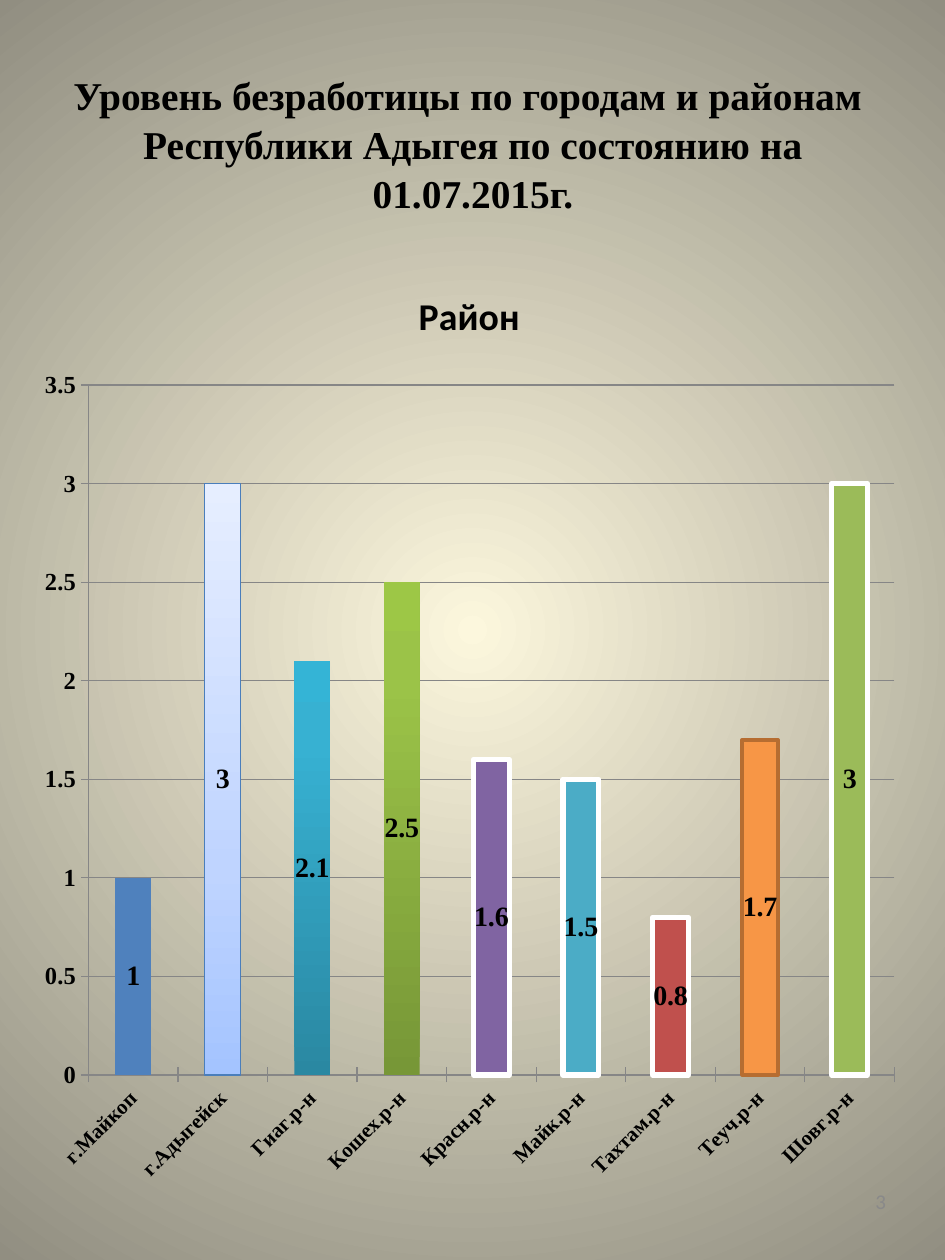
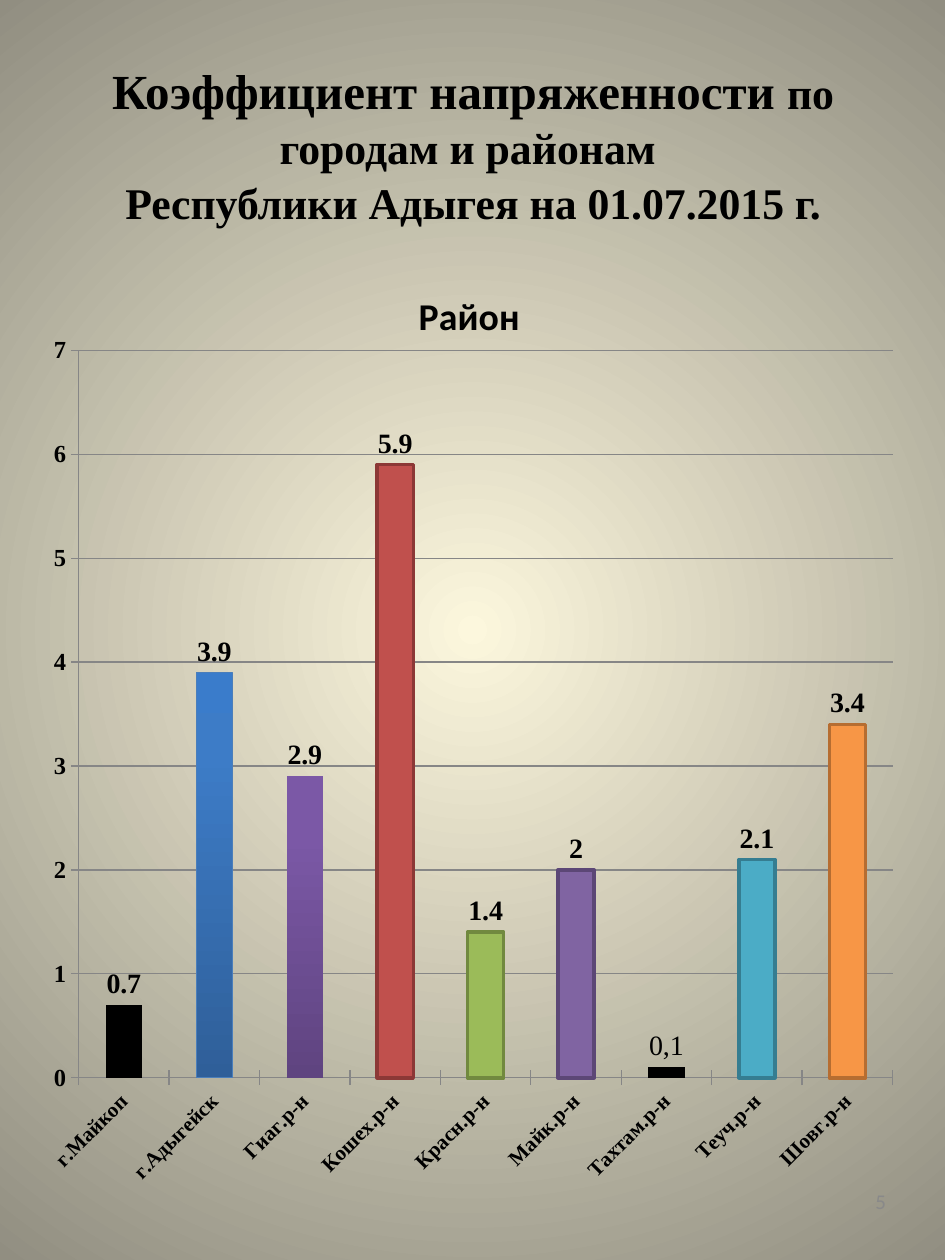
"""Two slides of column charts on unemployment in the districts of Adygea."""
from lxml.etree import SubElement
from pptx import Presentation
from pptx.chart.data import CategoryChartData
from pptx.dml.color import RGBColor
from pptx.enum.chart import XL_CHART_TYPE as CT, XL_LABEL_POSITION as LP, XL_TICK_MARK as TM
from pptx.enum.text import MSO_ANCHOR, MSO_AUTO_SIZE, PP_ALIGN
from pptx.oxml import parse_xml
from pptx.oxml.ns import nsdecls, qn
from pptx.util import Inches, Pt

COLORS = {
    "text": "000000", "muted": "898989", "grid": "868686", "white": "FFFFFF",
    "glow": "FCF7DD", "edge": "918E81",
    "blue": "4F81BD", "red": "C0504D", "green": "9BBB59",
    "purple": "8064A2", "teal": "4BACC6", "orange": "F79646",
    "blue_line": "4A7EBB", "red_line": "8C3836", "green_line": "71893F",
    "purple_line": "5C4776", "teal_line": "357D91", "orange_line": "B66D31",
}
SERIF, SANS = "Times New Roman", "Calibri"
UPWARD = '<a:lin ang="16200000" scaled="0"/>'
RADIAL = ('<a:path path="circle"><a:fillToRect l="50000" t="50000" '
          'r="50000" b="50000"/></a:path>')
DISTRICTS = ["г.Майкоп", "г.Адыгейск", "Гиаг.р-н", "Кошех.р-н", "Красн.р-н",
             "Майк.р-н", "Тахтам.р-н", "Теуч.р-н", "Шовг.р-н"]


def rgb(name):
    """Return the named colour."""
    return RGBColor.from_string(COLORS[name])


def gradient(stops, shade):
    """Return a gradient fill element from (percent, hex) stops."""
    gs = "".join(f'<a:gs pos="{pos * 1000}"><a:srgbClr val="{c}"/></a:gs>' for pos, c in stops)
    return parse_xml(f'<a:gradFill {nsdecls("a")} rotWithShape="1">'
                     f'<a:gsLst>{gs}</a:gsLst>{shade}</a:gradFill>')


def style_font(font, size, name=SERIF, bold=True, color="text"):
    """Format a font."""
    font.size, font.name, font.bold = Pt(size), name, bold
    font.color.rgb = rgb(color)


def add_text(p, text, **fmt):
    """Add formatted text to a paragraph, with a line break at each newline."""
    for i, line in enumerate(text.split("\n")):
        if i:
            p.add_line_break()
        r = p.add_run()
        r.text = line
        style_font(r.font, **fmt)


class Deck:
    """Holds the shared style and the current slide."""

    def __init__(self):
        """Set the slide size and the shared background."""
        self.prs = Presentation()
        self.prs.slide_width, self.prs.slide_height = Inches(7.5), Inches(10)
        master = self.prs.slide_master
        master.background.fill.solid()
        bg = master._element.find(".//" + qn("p:bgPr"))
        bg.replace(bg[0], gradient([(0, COLORS["glow"]), (100, COLORS["edge"])], RADIAL))

    def new_slide(self):
        """Start a slide."""
        self.s = self.prs.slides.add_slide(self.prs.slide_layouts[5])

    def title(self, *parts):
        """Fill the title from (text, size) parts."""
        sp = self.s.shapes.title
        sp.left, sp.top, sp.width, sp.height = map(Inches, (0.38, 0.4, 6.75, 1.67))
        tf = sp.text_frame
        tf.word_wrap, tf.auto_size = True, MSO_AUTO_SIZE.NONE
        tf.vertical_anchor, tf.margin_bottom = MSO_ANCHOR.MIDDLE, Inches(0.25)
        p = tf.paragraphs[0]
        p.alignment, p.line_spacing = PP_ALIGN.CENTER, 1.04
        for text, size in parts:
            add_text(p, text, size=size)

    def number(self, n):
        """Add the page number."""
        tf = self.s.shapes.add_textbox(*map(Inches, (5.38, 9.27, 1.75, 0.53))).text_frame
        tf.word_wrap, tf.vertical_anchor = True, MSO_ANCHOR.MIDDLE
        p = tf.paragraphs[0]
        p.alignment = PP_ALIGN.RIGHT
        add_text(p, str(n), size=12, name=SANS, bold=False, color="muted")

    def chart(self, kind, values, bars, top, step, plot, label_pos):
        """Add a column chart; bars holds a (fill, line, line width) per district."""
        data = CategoryChartData()
        data.categories = DISTRICTS
        data.add_series("Series 1", values)
        box = map(Inches, (0.21, 2.04, 7.03, 7.48))
        chart = self.s.shapes.add_chart(kind, *box, data).chart
        style_font(chart.font, 18, SANS, False)
        chart.has_legend = False
        p = chart.chart_title.text_frame.paragraphs[0]
        add_text(p, "Район", size=21.6, name=SANS)
        self.axes(chart, top, step)
        self.place_plot(chart, plot)

        pl = chart.plots[0]
        pl.gap_width, pl.vary_by_categories = 150, False
        pl.has_data_labels = True
        labels = pl.data_labels
        labels.show_value, labels.position = True, label_pos
        style_font(labels.font, 16)
        ser = pl.series[0]
        ser.invert_if_negative = False
        ser.format.fill.solid()
        ser.format.fill.fore_color.rgb = rgb("blue")
        for i, bar in enumerate(bars):
            self.bar(ser, i, *bar)
        return ser

    def axes(self, chart, top, step):
        """Format both axes."""
        cat, val = chart.category_axis, chart.value_axis
        val.minimum_scale, val.maximum_scale, val.major_unit = 0, top, step
        for axis, size in ((cat, 12), (val, 14)):
            style_font(axis.tick_labels.font, size)
            axis.major_tick_mark = TM.CROSS
            axis.format.line.color.rgb = rgb("grid")
        val.has_major_gridlines = True
        val.major_gridlines.format.line.color.rgb = rgb("grid")
        cat._element.find(qn("c:txPr")).find(qn("a:bodyPr")).set("rot", "-2700000")

    def place_plot(self, chart, plot):
        """Fix the inner plot area as fractions of the chart."""
        area = chart._chartSpace.find(".//" + qn("c:plotArea"))
        for old in area.findall(qn("c:layout")):
            area.remove(old)
        layout = parse_xml(f'<c:layout {nsdecls("c")}><c:manualLayout/></c:layout>')
        fields = [("layoutTarget", "inner"), ("xMode", "edge"), ("yMode", "edge")]
        for tag, val in fields + list(zip("xywh", plot)):
            SubElement(layout[0], qn("c:" + tag)).set("val", str(val))
        area.insert(0, layout)

    def bar(self, ser, i, fill, line=None, width=2):
        """Format one column with a colour name or gradient stops."""
        fmt = ser.points[i].format
        if isinstance(fill, str):
            fmt.fill.solid()
            fmt.fill.fore_color.rgb = rgb(fill)
        else:
            dpt = ser._element.get_or_add_dPt_for_point(i)
            dpt.get_or_add_spPr().insert(0, gradient(fill, UPWARD))
        if line:
            fmt.line.color.rgb, fmt.line.width = rgb(line), Pt(width)


def main():
    """Build the deck."""
    deck = Deck()

    deck.new_slide()
    deck.title(("Уровень безработицы по городам и районам \n"
                "Республики Адыгея по состоянию на 01.07.2015г.", 22.5))
    bars = [
        ("blue",),
        ([(0, "A4C4FF"), (35, "BFD4FF"), (100, "E6EEFF")], "blue_line", 0.75),
        ([(0, "2A88A2"), (80, "37B1D2"), (100, "34B4D6")],),
        ([(0, "779737"), (80, "9BC348"), (100, "9DC746")],),
        ("purple", "white", 3), ("teal", "white", 3), ("red", "white", 3),
        ("orange", "orange_line"), ("green", "white", 3),
    ]
    deck.chart(CT.COLUMN_STACKED, [1, 3, 2.1, 2.5, 1.6, 1.5, 0.8, 1.7, 3], bars,
               3.5, 0.5, (0.07, 0.136, 0.91, 0.732), LP.CENTER)
    deck.number(3)

    deck.new_slide()
    deck.title(("Коэффициент напряженности ", 28),
               ("по городам и районам \nРеспублики Адыгея на 01.07.2015 г.", 25))
    bars = [
        ("text",),
        ([(0, "2F5F99"), (80, "3D7CC7"), (100, "3A7CCB")], "blue_line", 0.75),
        ([(0, "5F4480"), (80, "7B58A6"), (100, "7C57A8")],),
        ("red", "red_line"), ("green", "green_line"), ("purple", "purple_line"),
        ("text",), ("teal", "teal_line"), ("orange", "orange_line"),
    ]
    ser = deck.chart(CT.COLUMN_CLUSTERED, [0.7, 3.9, 2.9, 5.9, 1.4, 2, 0.1, 2.1, 3.4], bars,
                     7, 1, (0.059, 0.099, 0.919, 0.772), LP.OUTSIDE_END)
    label = ser.points[6].data_label
    add_text(label.text_frame.paragraphs[0], "0,1", size=16, bold=False)
    label.position = LP.OUTSIDE_END
    sl = ser.data_labels
    sl.show_value, sl.position = True, LP.OUTSIDE_END
    style_font(sl.font, 16)
    deck.number(5)

    deck.prs.save("out.pptx")


if __name__ == "__main__":
    main()
